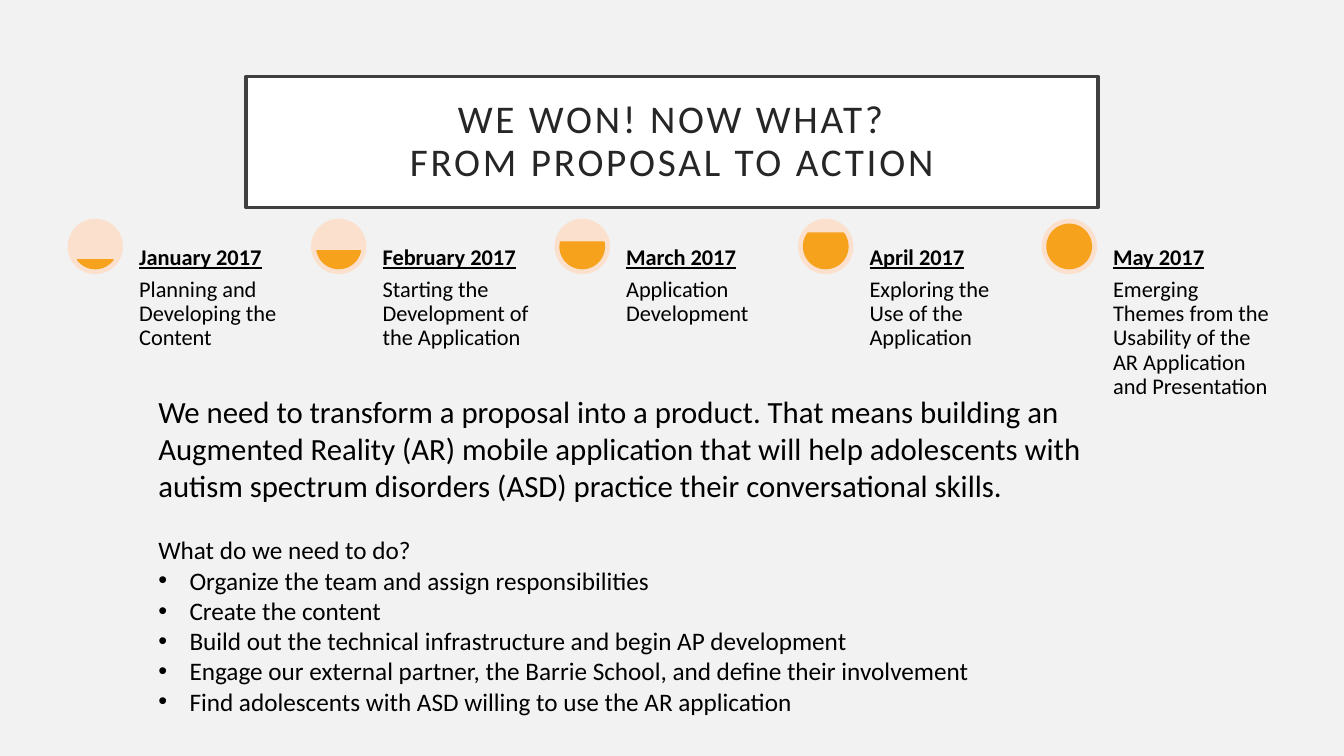
import math

from lxml import etree
from pptx import Presentation
from pptx.dml.color import RGBColor
from pptx.enum.shapes import MSO_SHAPE
from pptx.enum.text import MSO_ANCHOR, MSO_AUTO_SIZE, PP_ALIGN
from pptx.oxml.ns import qn
from pptx.util import Emu, Pt

PX = 9144  # one hundred px to the inch
TOP, MIDDLE, BOTTOM = MSO_ANCHOR.TOP, MSO_ANCHOR.MIDDLE, MSO_ANCHOR.BOTTOM
LEFT, CENTER = PP_ALIGN.LEFT, PP_ALIGN.CENTER
ELLIPSE, CHORD = MSO_SHAPE.OVAL, MSO_SHAPE.CHORD
NO_AUTOFIT = MSO_AUTO_SIZE.NONE

FONT = "Calibri"
PALE, ORANGE, BLACK = "FBE0CD", "F6A21D", "000000"

TITLE = "WE WON! NOW WHAT?\vFROM PROPOSAL TO ACTION"
MONTHS = [
    ("January 2017", "Planning and Developing the Content"),
    ("February 2017", "Starting the Development of the Application"),
    ("March 2017", "Application Development"),
    ("April 2017", "Exploring the Use of the Application"),
    ("May 2017", "Emerging Themes from the Usability of the AR "
                 "Application and Presentation"),
]
INTRO = ("We need to transform a proposal into a product. That means building "
         "an Augmented Reality (AR) mobile application that will help "
         "adolescents with autism spectrum disorders (ASD) practice their "
         "conversational skills.")
QUESTION = "What do we need to do?"
TASKS = [
    "Organize the team and assign responsibilities",
    "Create the content",
    "Build out the technical infrastructure and begin AP development",
    "Engage our external partner, the Barrie School, and define their involvement",
    "Find adolescents with ASD willing to use the AR application",
]


def px(length):
    return Emu(round(length * PX))


def color(code):
    return RGBColor.from_string(code)


def place(shape, box):
    for name, length in zip(("left", "top", "width", "height"), box):
        setattr(shape, name, px(length))


def set_frame(frame, anchor, across, down):
    values = {
        "word_wrap": True, "auto_size": NO_AUTOFIT, "vertical_anchor": anchor,
        "margin_left": px(across), "margin_right": px(across),
        "margin_top": px(down), "margin_bottom": px(down),
    }
    for name, value in values.items():
        setattr(frame, name, value)


def write(para, text, size, ink=BLACK, align=LEFT, spacing=1.0, before=0, **font):
    """Fill a paragraph and format all its runs."""
    para.text = text
    layout = {"alignment": align, "line_spacing": spacing,
              "space_before": Pt(before), "space_after": Pt(0)}
    for name, value in layout.items():
        setattr(para, name, value)
    for span in para.runs:
        for name, value in {"name": FONT, "size": Pt(size), **font}.items():
            setattr(span.font, name, value)
        span.font.color.rgb = color(ink)


def set_bullet(para, indent, mark=None):
    props = para._p.get_or_add_pPr()
    props.set("marL", str(px(indent)))
    props.set("indent", str(px(-indent)))
    if mark:
        etree.SubElement(props, qn("a:buFont")).set("typeface", "Arial")
        etree.SubElement(props, qn("a:buChar")).set("char", mark)
    else:
        etree.SubElement(props, qn("a:buNone"))


def add_title(page, box):
    title = page.shapes.title
    place(title, box)
    title.fill.solid()
    title.fill.fore_color.rgb = color("FFFFFF")
    title.line.color.rgb = color("404040")
    title.line.width = Pt(2.5)
    set_frame(title.text_frame, MIDDLE, 20, 20)
    para = title.text_frame.paragraphs[0]
    write(para, TITLE, 28, "262626", CENTER, 0.9)
    for span in para.runs:
        span.font._element.set("spc", "200")


def add_disc(group, kind, box, fill):
    disc = group.shapes.add_shape(kind, *map(px, box))
    disc.shadow.inherit = False
    disc.fill.solid()
    disc.fill.fore_color.rgb = color(fill)
    disc.line.fill.background()
    return disc


def add_gauge(group, left, top, size, level):
    """Draw a disc filled from the bottom up to the given level."""
    add_disc(group, ELLIPSE, (left, top, size, size), PALE)
    inset = size / 10
    inner = size - 2 * inset
    chord = add_disc(group, CHORD, (left + inset, top + inset, inner, inner), ORANGE)
    chord.line.color.rgb = color(ORANGE)
    chord.line.width = Pt(1)
    half = math.degrees(math.acos(1 - 2 * level))
    for index, angle in enumerate((90 - half, 90 + half)):
        chord.adjustments[index] = angle % 360 * 0.6  # 60000ths of a degree


def add_label(group, box, text, anchor, **font):
    label = group.shapes.add_textbox(*map(px, box))
    set_frame(label.text_frame, anchor, 4, 4)
    write(label.text_frame.paragraphs[0], text, 16, spacing=0.9, **font)


def add_timeline(page, box):
    left, top, width, height = box
    disc, offset, text_width = 55, 67, 163
    pitch = (width - offset - text_width) / (len(MONTHS) - 1)
    group = page.shapes.add_group_shape()
    for index, (month, task) in enumerate(MONTHS):
        start = left + index * pitch
        text_left = start + offset
        add_gauge(group, start, top, disc, (index + 1) / len(MONTHS))
        add_label(group, (text_left, top + disc, text_width, height - disc), task, TOP)
        add_label(group, (text_left, top, text_width, disc), month, BOTTOM,
                  bold=True, underline=True)


def add_plan(page, box):
    body = page.placeholders[1]
    place(body, box)
    frame = body.text_frame
    set_frame(frame, TOP, 10, 5)
    intro = frame.paragraphs[0]
    write(intro, INTRO, 22)
    set_bullet(intro, 0)
    question = frame.add_paragraph()
    write(question, QUESTION, 18, before=22)
    set_bullet(question, 0)
    for task in TASKS:
        para = frame.add_paragraph()
        write(para, task, 18)
        set_bullet(para, 31, "•")


def main():
    deck = Presentation()
    deck.slide_width, deck.slide_height = px(1333), px(750)
    page = deck.slides.add_slide(deck.slide_layouts[1])
    page.background.fill.solid()
    page.background.fill.fore_color.rgb = color("F2F2F2")
    add_title(page, (244, 76, 845, 130))
    add_timeline(page, (67, 217, 1196, 287))
    add_plan(page, (147, 385, 942, 364))
    deck.save("out.pptx")


if __name__ == "__main__":
    main()
